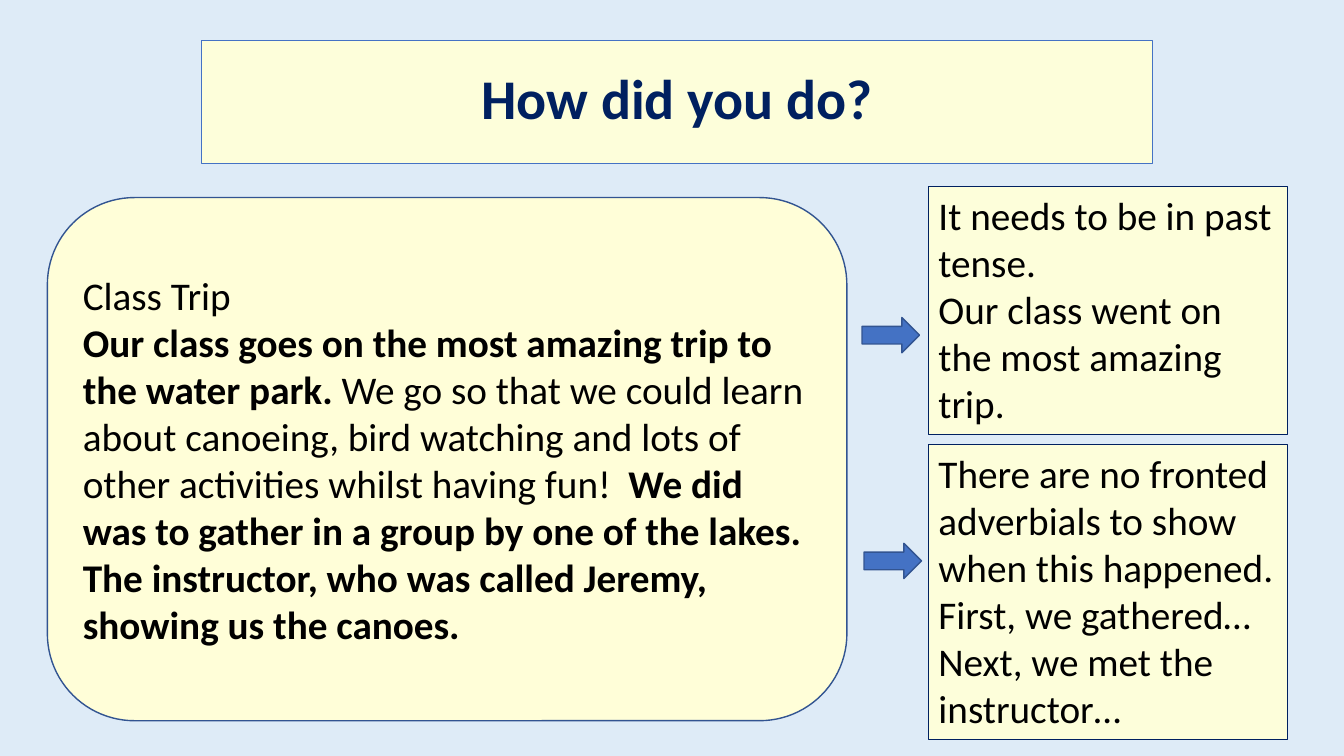
from pptx import Presentation
from pptx.dml.color import RGBColor
from pptx.enum.shapes import MSO_SHAPE
from pptx.enum.text import MSO_ANCHOR, MSO_AUTO_SIZE, PP_ALIGN
from pptx.util import Inches, Pt

COLORS = {"bg": "DEEBF7", "cream": "FDFEDA", "story": "FFFED8", "navy": "002060",
          "blue": "4472C4", "edge": "325491", "text": "000000"}


def style(sp, fill, line, width):
    sp.fill.solid()
    sp.fill.fore_color.rgb = RGBColor.from_string(COLORS[fill])
    sp.line.color.rgb = RGBColor.from_string(COLORS[line])
    sp.line.width = Pt(width)


def write(tf, paragraphs, size=28, color="text", align=PP_ALIGN.LEFT):
    """Each paragraph is a list of (text, bold) runs."""
    tf.word_wrap = True
    for i, runs in enumerate(paragraphs):
        p = tf.paragraphs[0] if i == 0 else tf.add_paragraph()
        p.alignment = align
        p.font.name = "Calibri"
        p.font.size = Pt(size)
        p.font.color.rgb = RGBColor.from_string(COLORS[color])
        for text, bold in runs:
            r = p.add_run()
            r.text = text
            r.font.bold = bold


prs = Presentation()
prs.slide_width, prs.slide_height = Inches(13.33), Inches(7.5)
s = prs.slides.add_slide(prs.slide_layouts[5])
s.background.fill.solid()
s.background.fill.fore_color.rgb = RGBColor.from_string(COLORS["bg"])

# Title
title = s.shapes.title
title.left, title.top, title.width, title.height = map(Inches, (2, 0.4, 9.43, 1.22))
style(title, "cream", "blue", 0.75)
tf = title.text_frame
write(tf, [[("How did you do?", True)]], 40, "navy", PP_ALIGN.CENTER)
tf.vertical_anchor = MSO_ANCHOR.MIDDLE
tf.auto_size = MSO_AUTO_SIZE.NONE
tf.paragraphs[0].line_spacing = 0.9

# Story to be corrected
story = s.shapes.add_shape(MSO_SHAPE.ROUNDED_RECTANGLE, *map(Inches, (0.47, 1.96, 7.93, 5.19)))
story.shadow.inherit = False
style(story, "story", "edge", 1)
story.text_frame.vertical_anchor = MSO_ANCHOR.MIDDLE
write(story.text_frame, [
    [("Class Trip", False)],
    [("Our class goes on the most amazing trip to the water park.", True),
     (" We go so that we could learn about canoeing, bird watching and lots of "
      "other activities whilst having fun!  ", False),
     ("We did was to gather in a group by one of the lakes. The instructor, "
      "who was called Jeremy, showing us the canoes.", True)],
])

# Feedback notes: top, height, lines
notes = [
    (1.85, 2.46, ["It needs to be in past tense.",
                  "Our class went on the most amazing trip."]),
    (4.41, 2.93, ["There are no fronted adverbials to show when this happened.",
                  "First, we gathered…", "Next, we met the instructor…"]),
]
for top, height, lines in notes:
    note = s.shapes.add_textbox(*map(Inches, (9.21, top, 3.56, height)))
    style(note, "cream", "navy", 0.75)
    write(note.text_frame, [[(line, False)] for line in lines])
    note.text_frame.auto_size = MSO_AUTO_SIZE.SHAPE_TO_FIT_TEXT

# Arrows from the story to the notes
for left, top in [(8.55, 3.15), (8.57, 5.39)]:
    arrow = s.shapes.add_shape(MSO_SHAPE.RIGHT_ARROW, *map(Inches, (left, top, 0.57, 0.35)))
    arrow.shadow.inherit = False
    style(arrow, "blue", "edge", 1)

prs.save("out.pptx")
